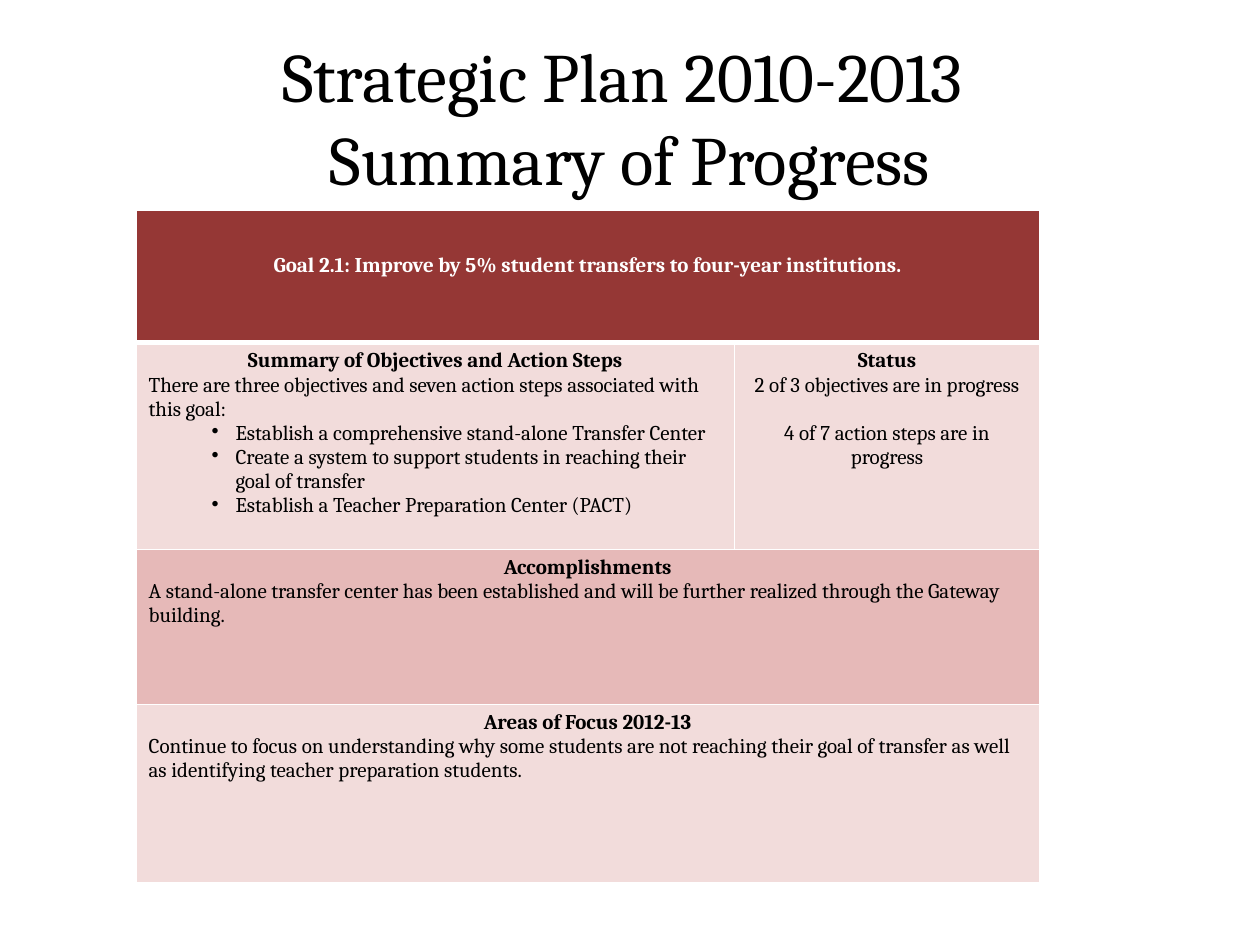
import pptx
import pptx.util
import pptx.dml.color
import pptx.enum.text
import pptx.oxml
import pptx.oxml.ns

Inches = pptx.util.Inches
Pt = pptx.util.Pt
ALIGN = pptx.enum.text.PP_ALIGN
COLORS = {"header": "953735", "light": "F2DCDB", "medium": "E6B9B8",
          "white": "FFFFFF", "black": "000000"}


class SlideBuilder:
    font_name = "Cambria"
    body_size = 12

    def __init__(self, slide):
        self.slide = slide

    def style(self, paragraph, size, color="black", bold=False, align=ALIGN.LEFT):
        paragraph.alignment = align
        font = paragraph.font
        font.name, font.size, font.bold = self.font_name, Pt(size), bold
        font.color.rgb = pptx.dml.color.RGBColor.from_string(COLORS[color])

    def title(self, text, left, top, width, height):
        shape = self.slide.shapes.title
        shape.left, shape.top = Inches(left), Inches(top)
        shape.width, shape.height = Inches(width), Inches(height)
        frame = shape.text_frame
        frame.auto_size = pptx.enum.text.MSO_AUTO_SIZE.NONE
        frame.vertical_anchor = pptx.enum.text.MSO_ANCHOR.MIDDLE
        frame.text = text
        self.style(frame.paragraphs[0], 39.6, align=ALIGN.CENTER)

    def table(self, left, top, columns, rows):
        table = self.slide.shapes.add_table(
            len(rows), len(columns), Inches(left), Inches(top),
            Inches(sum(columns)), Inches(sum(rows))).table
        for column, width in zip(table.columns, columns):
            column.width = Inches(width)
        for row, height in zip(table.rows, rows):
            row.height = Inches(height)
        return table

    def fill_cell(self, cell, color, bottom=1, top=1):
        for side, width in (("L", 1), ("R", 1), ("T", top), ("B", bottom)):
            cell._tc.get_or_add_tcPr().append(pptx.oxml.parse_xml(
                f'<a:ln{side} {pptx.oxml.ns.nsdecls("a")} w="{Pt(width)}"><a:solidFill>'
                f'<a:srgbClr val="{COLORS["white"]}"/></a:solidFill></a:ln{side}>'))
        cell.fill.solid()
        cell.fill.fore_color.rgb = pptx.dml.color.RGBColor.from_string(COLORS[color])

    def add_paragraph(self, cell, text):
        frame = cell.text_frame
        paragraph = frame.add_paragraph() if frame.text else frame.paragraphs[0]
        paragraph.text = text
        return paragraph

    def heading(self, cell, text, color="black"):
        self.style(self.add_paragraph(cell, text), self.body_size, color, True, ALIGN.CENTER)

    def body(self, cell, text, align=ALIGN.LEFT, space_before=0):
        paragraph = self.add_paragraph(cell, text)
        self.style(paragraph, self.body_size, align=align)
        paragraph.space_before = Pt(space_before)

    def bullet(self, cell, text):
        paragraph = self.add_paragraph(cell, text)
        properties = paragraph._p.get_or_add_pPr()
        properties.set("marL", str(Inches(0.69)))
        properties.set("indent", str(Inches(-0.19)))
        properties.append(pptx.oxml.parse_xml(
            f'<a:buChar {pptx.oxml.ns.nsdecls("a")} char="•"/>'))
        paragraph.level = 1
        self.style(paragraph, self.body_size)


def main():
    presentation = pptx.Presentation()
    presentation.slide_width, presentation.slide_height = Inches(10), Inches(7.5)
    builder = SlideBuilder(presentation.slides.add_slide(presentation.slide_layouts[5]))
    builder.title("Strategic Plan 2010-2013 \vSummary of Progress", 0.5, 0.3, 9, 1.25)

    table = builder.table(1.08, 1.67, [4.75, 2.42], [1.05, 1.64, 1.23, 1.42])
    for index, color in enumerate(["header", "light", "medium", "light"]):
        for cell in table.rows[index].cells:
            builder.fill_cell(cell, color, bottom=3 if index == 0 else 1,
                              top=3 if index == 1 else 1)
    for index in (0, 2, 3):
        table.cell(index, 0).merge(table.cell(index, 1))

    goal = table.cell(0, 0)
    goal.margin_top = Inches(0.34)
    builder.heading(goal, "Goal 2.1: Improve by 5% student transfers to four-year institutions.",
                    "white")

    objectives = table.cell(1, 0)
    builder.heading(objectives, "Summary of Objectives and Action Steps")
    builder.body(objectives, "There are three objectives and seven action steps "
                             "associated with this goal:")
    for step in ("Establish a comprehensive stand-alone Transfer Center",
                 "Create a system to support students in reaching their goal of transfer",
                 "Establish a Teacher Preparation Center (PACT)"):
        builder.bullet(objectives, step)

    status = table.cell(1, 1)
    builder.heading(status, "Status")
    builder.body(status, "2 of 3 objectives are in progress", ALIGN.CENTER)
    builder.body(status, "4 of 7 action steps are in progress", ALIGN.CENTER, 14)

    accomplishments = table.cell(2, 0)
    builder.heading(accomplishments, "Accomplishments")
    builder.body(accomplishments, "A stand-alone transfer center has been established and "
                                  "will be further realized through the Gateway building.")

    focus = table.cell(3, 0)
    builder.heading(focus, "Areas of Focus 2012-13")
    builder.body(focus, "Continue to focus on understanding why some students are not "
                        "reaching their goal of transfer as well as identifying teacher "
                        "preparation students.")
    presentation.save("out.pptx")


if __name__ == "__main__":
    main()
